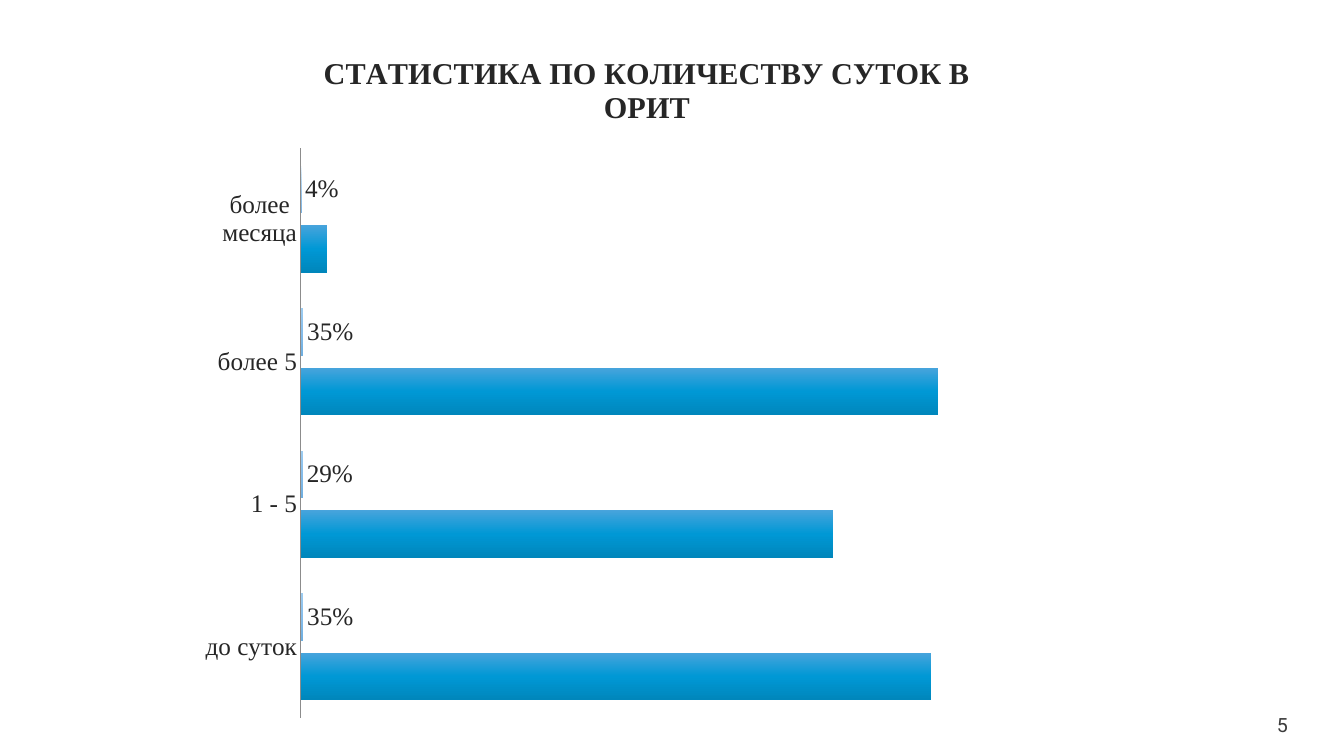
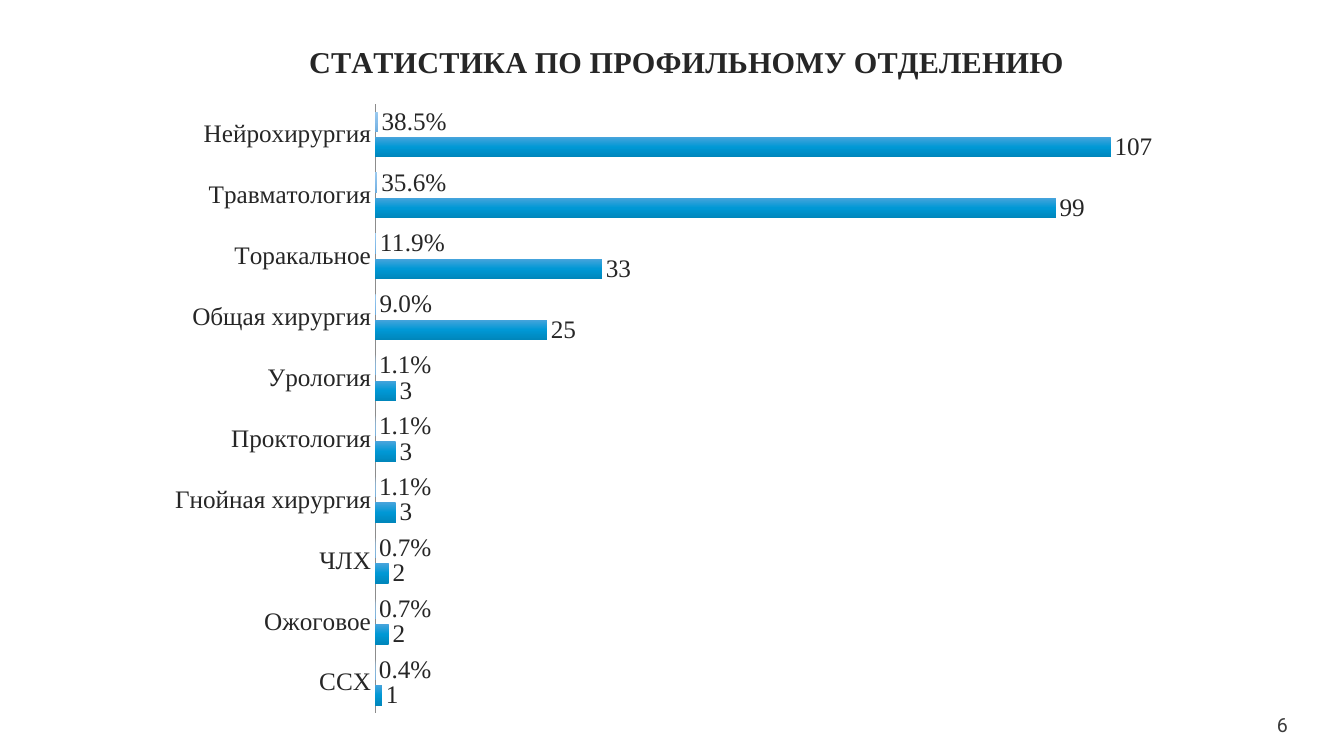
import pptx
import pptx.chart.data
import pptx.dml.color
import pptx.enum.chart
import pptx.enum.text
import pptx.oxml
import pptx.oxml.ns
import pptx.util

PX = 914400 / 100.8
TEXT, AXIS, NUMBER = "262626", "8C8C8C", "3C3C3C"
SERIF, SANS = "Times New Roman", "Roboto"
GRADIENTS = (("48A4DC", "0098D5", "0086BB"), ("9CCBF0", "86BDEA", "6FAEDF"))
AXIS_MAX = 120


def px(n):
    return pptx.util.Emu(round(n * PX))


def rgb(value):
    return pptx.dml.color.RGBColor.from_string(value)


def style_font(font, name, size, color, bold=False):
    values = {"name": name, "size": pptx.util.Pt(size), "bold": bold}
    for key, value in values.items():
        setattr(font, key, value)
    font.color.rgb = rgb(color)


def fill_gradient(series, colors):
    """Fill the bars from top to bottom with evenly spaced colours."""
    stops = "".join(
        f'<a:gs pos="{i * 100000 // (len(colors) - 1)}"><a:srgbClr val="{c}"/></a:gs>'
        for i, c in enumerate(colors))
    series.format.fill.background()
    props = series.format.fill._xPr
    old = props.find(pptx.oxml.ns.qn("a:noFill"))
    props.replace(old, pptx.oxml.parse_xml(
        f'<a:gradFill {pptx.oxml.ns.nsdecls("a")} rotWithShape="1"><a:gsLst>{stops}'
        '</a:gsLst><a:lin ang="5400000" scaled="0"/></a:gradFill>'))


def place_plot(chart, box, plot):
    """Fix the inner plot area; both boxes are in slide px."""
    x, y, w, h = box
    left, top, width, height = plot
    shares = {"x": (left - x) / w, "y": (top - y) / h, "w": width / w, "h": height / h}
    parts = "".join(f'<c:{k} val="{v:.4f}"/>' for k, v in shares.items())
    layout = pptx.oxml.parse_xml(
        f'<c:layout {pptx.oxml.ns.nsdecls("c")}><c:manualLayout>'
        '<c:layoutTarget val="inner"/><c:xMode val="edge"/><c:yMode val="edge"/>'
        f'{parts}</c:manualLayout></c:layout>')
    area = chart._chartSpace.chart.plotArea
    for old in area.findall(pptx.oxml.ns.qn("c:layout")):
        area.remove(old)
    area.insert(0, layout)


def add_title(chart, text):
    chart.has_title = True
    chart.chart_title.include_in_layout = False
    p = chart.chart_title.text_frame.paragraphs[0]
    r = p.add_run()
    r.text = text
    style_font(r.font, SERIF, 21.6, TEXT, True)


def style_axes(chart):
    cat, val = chart.category_axis, chart.value_axis
    cat.major_tick_mark = pptx.enum.chart.XL_TICK_MARK.NONE
    cat.format.line.color.rgb = rgb(AXIS)
    cat.format.line.width = pptx.util.Pt(0.75)
    style_font(cat.tick_labels.font, SERIF, 18, TEXT)
    values = {"visible": False, "has_major_gridlines": False,
              "minimum_scale": 0, "maximum_scale": AXIS_MAX}
    for key, value in values.items():
        setattr(val, key, value)


def add_labels(series, number_format):
    labels = series.data_labels
    values = {"show_value": True, "number_format": number_format,
              "number_format_is_linked": False,
              "position": pptx.enum.chart.XL_LABEL_POSITION.OUTSIDE_END}
    for key, value in values.items():
        setattr(labels, key, value)
    style_font(labels.font, SERIF, 18, TEXT)


def add_bar_chart(s, box, plot, title, rows, formats):
    """rows holds (category, count, share); a format of None hides the labels."""
    names, counts, shares = zip(*rows)
    data = pptx.chart.data.CategoryChartData()
    data.categories = names
    data.add_series("Series 1", counts)
    data.add_series("Series 2", shares)
    chart = s.shapes.add_chart(pptx.enum.chart.XL_CHART_TYPE.BAR_CLUSTERED,
                               *map(px, box), data).chart
    chart.has_legend = False
    style_font(chart.font, SANS, 18, TEXT)
    add_title(chart, title)
    style_axes(chart)
    bars = chart.plots[0]
    for key, value in {"gap_width": 75, "overlap": -25, "vary_by_categories": False}.items():
        setattr(bars, key, value)
    for series, colors, number_format in zip(bars.series, GRADIENTS, formats):
        fill_gradient(series, colors)
        if number_format:
            add_labels(series, number_format)
    place_plot(chart, box, plot)


def add_page_number(s, number):
    tf = s.shapes.add_textbox(px(1263), px(713), px(25), px(24)).text_frame
    values = {"margin_left": 0, "margin_right": 0, "margin_top": 0, "margin_bottom": 0,
              "word_wrap": True, "vertical_anchor": pptx.enum.text.MSO_ANCHOR.MIDDLE}
    for key, value in values.items():
        setattr(tf, key, value)
    p = tf.paragraphs[0]
    p.alignment = pptx.enum.text.PP_ALIGN.RIGHT
    r = p.add_run()
    r.text = str(number)
    style_font(r.font, SANS, 14, NUMBER)


SLIDES = [
    {"box": (187, 29, 920, 704), "plot": (301, 148, 788, 570),
     "title": "СТАТИСТИКА ПО КОЛИЧЕСТВУ СУТОК В ОРИТ",
     "formats": (None, "0%"),
     "rows": [("до суток", 96, 0.35), ("1 - 5", 81, 0.29),
              ("более 5", 97, 0.35), ("более месяца", 4, 0.04)]},
    {"box": (153, 18, 1068, 709), "plot": (375, 104, 825, 609),
     "title": "СТАТИСТИКА ПО ПРОФИЛЬНОМУ ОТДЕЛЕНИЮ",
     "formats": ("0", "0.0%"),
     "rows": [("ССХ", 1, 0.004), ("Ожоговое", 2, 0.007), ("ЧЛХ", 2, 0.007),
              ("Гнойная хирургия", 3, 0.011), ("Проктология", 3, 0.011),
              ("Урология", 3, 0.011), ("Общая хирургия", 25, 0.09),
              ("Торакальное", 33, 0.119), ("Травматология", 99, 0.356),
              ("Нейрохирургия", 107, 0.385)]},
]


def main():
    prs = pptx.Presentation()
    prs.slide_width, prs.slide_height = px(1344), px(756)
    for number, content in enumerate(SLIDES, start=5):
        s = prs.slides.add_slide(prs.slide_layouts[6])
        add_page_number(s, number)
        add_bar_chart(s, **content)
    prs.save("out.pptx")


if __name__ == "__main__":
    main()
